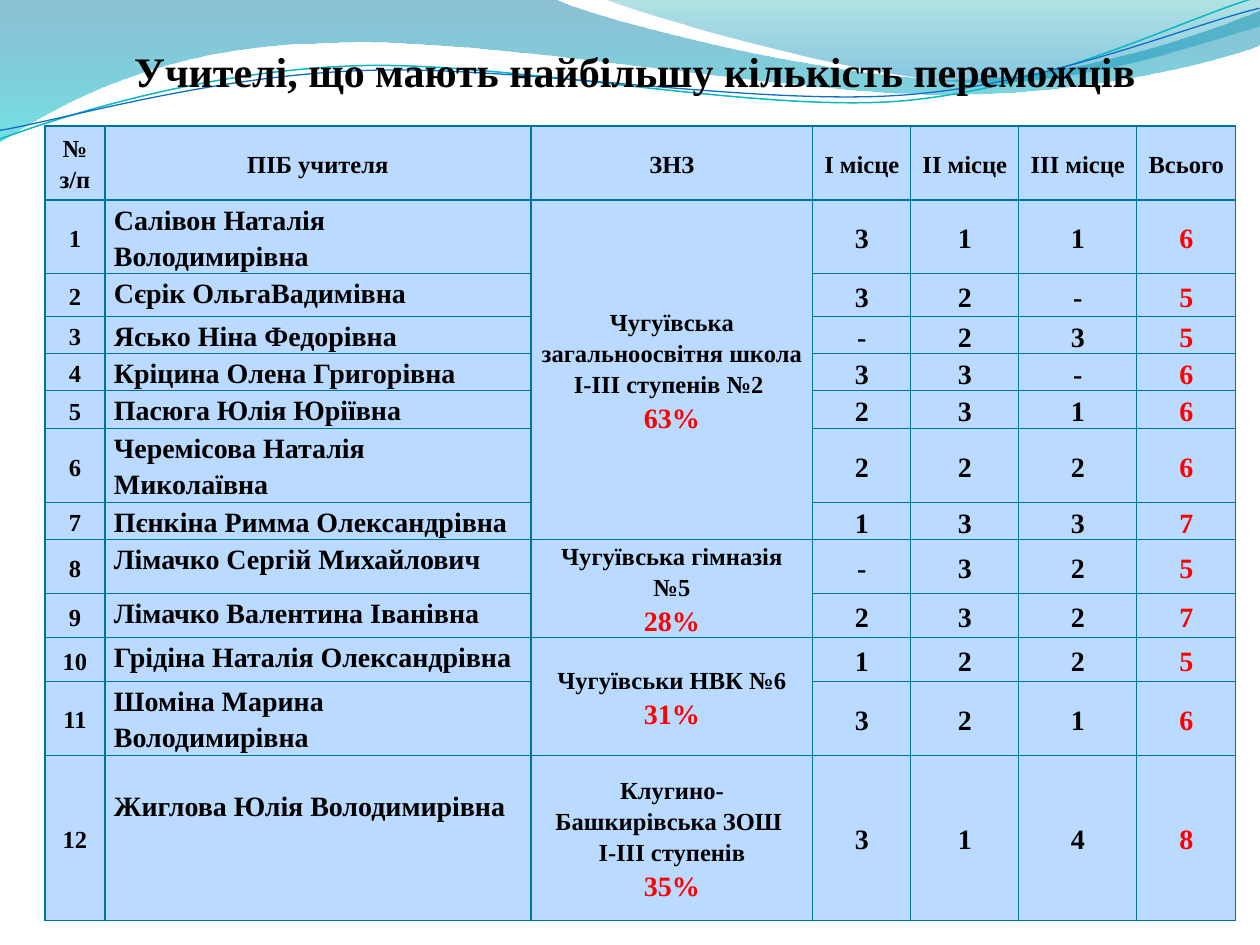
from dataclasses import dataclass

from lxml.etree import SubElement
from pptx import Presentation
from pptx.dml.color import RGBColor
from pptx.enum.text import MSO_ANCHOR, MSO_AUTO_SIZE, PP_ALIGN
from pptx.oxml import parse_xml
from pptx.oxml.ns import nsdecls, qn
from pptx.util import Emu, Pt

SCALE = 914400 / 126


@dataclass(frozen=True)
class Theme:
    font: str = "Times New Roman"
    text: str = "000000"
    accent: str = "FF0000"
    cell: str = "BADAFF"
    border: str = "0074A1"
    title_size: int = 24
    large: int = 16
    small: int = 14
    border_width: float = 0.75
    line_spacing: float = 1.15
    ribbon_rotation: float = 357.3


def px(length):
    return Emu(round(length * SCALE))


class SlideBuilder:
    def __init__(self, slide, theme):
        self.slide = slide
        self.theme = theme

    def outline(self, start, segments, close):
        builder = self.slide.shapes.build_freeform(px(start[0]), px(start[1]))
        points = [(px(x), px(y)) for segment in segments for x, y in segment]
        builder.add_line_segments(points, close=close)
        shape = builder.convert_to_shape()
        shape.shadow.inherit = False
        lines = iter(shape._element.xpath(".//a:lnTo"))
        for segment in segments:
            first, *others = [next(lines) for _ in segment]
            if others:
                curve = first.makeelement(qn("a:cubicBezTo"))
                first.addprevious(curve)
                for line in (first, *others):
                    curve.append(line[0])
                    line.getparent().remove(line)
        return shape

    def wave(self, start, segments, stops):
        shape = self.outline(start, segments, True)
        shape.line.fill.background()
        shape.fill.gradient()
        shape.fill.gradient_angle = 270
        for gradient_stop, (position, color, _) in zip(shape.fill.gradient_stops, stops):
            gradient_stop.position = position
            gradient_stop.color.rgb = RGBColor.from_string(color)
        colors = shape._element.xpath(".//a:gradFill//a:srgbClr")
        for color_element, (_, _, opacity) in zip(colors, stops):
            SubElement(color_element, qn("a:alpha")).set("val", str(opacity * 1000))

    def ribbon(self, start, segments, color, width):
        shape = self.outline(start, segments, False)
        shape.rotation = self.theme.ribbon_rotation
        shape.fill.background()
        shape.line.color.rgb = RGBColor.from_string(color)
        shape.line.width = Pt(width)

    def format_paragraph(self, paragraph, size, color, alignment):
        paragraph.alignment = alignment
        for run in paragraph.runs:
            run.font.name = self.theme.font
            run.font.size = Pt(size)
            run.font.bold = True
            run.font.color.rgb = RGBColor.from_string(color)

    def title(self, text, left, top, width, height):
        shape = self.slide.shapes.title
        shape.left, shape.top, shape.width, shape.height = map(px, (left, top, width, height))
        frame = shape.text_frame
        frame.text = text
        frame.auto_size = MSO_AUTO_SIZE.NONE
        frame.vertical_anchor = MSO_ANCHOR.BOTTOM
        frame.margin_left = frame.margin_right = frame.margin_bottom = 0
        frame.margin_top = px(6)
        self.format_paragraph(frame.paragraphs[0], self.theme.title_size,
                              self.theme.text, PP_ALIGN.CENTER)
        self.slide.shapes._spTree.append(shape._element)

    def table(self, left, top, widths, heights):
        frame = self.slide.shapes.add_table(
            len(heights), len(widths), px(left), px(top), px(sum(widths)), px(sum(heights)))
        table = frame.table
        for column, width in zip(table.columns, widths):
            column.width = px(width)
        for row, height in zip(table.rows, heights):
            row.height = px(height)
        for cell in table.iter_cells():
            self.style_cell(cell)
        return table

    def style_cell(self, cell):
        cell.margin_left = cell.margin_right = px(9)
        cell.margin_top = cell.margin_bottom = 0
        cell.vertical_anchor = MSO_ANCHOR.MIDDLE
        cell.fill.solid()
        cell.fill.fore_color.rgb = RGBColor.from_string(self.theme.cell)
        properties = cell._tc.get_or_add_tcPr()
        for index, side in enumerate("LRTB"):
            properties.insert(index, parse_xml(
                f'<a:ln{side} {nsdecls("a")} w="{Pt(self.theme.border_width)}"><a:solidFill>'
                f'<a:srgbClr val="{self.theme.border}"/></a:solidFill></a:ln{side}>'))

    def cell_text(self, cell, lines, alignment=PP_ALIGN.CENTER):
        frame = cell.text_frame
        for index, (text, size, color) in enumerate(lines):
            paragraph = frame.add_paragraph() if index else frame.paragraphs[0]
            paragraph.text = text
            paragraph.line_spacing = self.theme.line_spacing
            self.format_paragraph(paragraph, size, color, alignment)


WAVES = [
    ((0, 0), [((554, -1),), ((600, 21), (837, 79), (955, 79)),
              ((1075, 79), (1207, 33), (1260, 11)), ((1261, 45),),
              ((1239, 55), (1096, 96), (940, 94)), ((784, 94), (481, 35), (324, 43)),
              ((163, 45), (58, 105), (-1, 142))],
     [(0, "0074A1", 45), (1, "00C6CF", 55)]),
    ((604, -1), [((641, 15), (859, 78), (969, 82)),
                 ((1079, 87), (1211, 40), (1260, 26)), ((1260, 0),)],
     [(0, "00A1A9", 30), (0.8, "008BBF", 45)]),
]
RIBBONS = [
    ((-4, 110), [((59, 90), (199, 52), (350, 53)), ((499, 53), (745, 118), (896, 114)),
                 ((1049, 109), (1184, 45), (1260, 27))], "0AB8BF", 0.85),
    ((-4, 101), [((57, 94), (207, 57), (358, 58)), ((509, 58), (750, 112), (902, 108)),
                 ((1052, 104), (1188, 52), (1262, 38))], "0F6FC6", 0.75),
]
COLUMN_WIDTHS = [60, 426, 282, 98, 108, 118, 99]
ROW_HEIGHTS = [74, 74, 43, 37, 37, 38, 74, 37, 54, 44, 44, 74, 165]
HEADERS = ["№\nз/п", "ПІБ учителя", "ЗНЗ", "І місце", "ІІ місце", "ІІІ місце", "Всього"]
TEACHERS = [
    ("Салівон Наталія Володимирівна", "3", "1", "1", "6"),
    ("Сєрік ОльгаВадимівна", "3", "2", "-", "5"),
    ("Ясько Ніна Федорівна", "-", "2", "3", "5"),
    ("Кріцина Олена Григорівна", "3", "3", "-", "6"),
    ("Пасюга Юлія Юріївна", "2", "3", "1", "6"),
    ("Черемісова Наталія Миколаївна", "2", "2", "2", "6"),
    ("Пєнкіна Римма Олександрівна", "1", "3", "3", "7"),
    ("Лімачко Сергій Михайлович", "-", "3", "2", "5"),
    ("Лімачко Валентина Іванівна", "2", "3", "2", "7"),
    ("Грідіна Наталія Олександрівна", "1", "2", "2", "5"),
    ("Шоміна Марина Володимирівна", "3", "2", "1", "6"),
    ("Жиглова Юлія Володимирівна", "3", "1", "4", "8"),
]
SCHOOLS = [
    (7, "Чугуївська загальноосвітня школа І-ІІІ ступенів №2 ", "63%"),
    (2, "Чугуївська гімназія №5", "28%"),
    (2, "Чугуївськи НВК №6", "31%"),
    (1, "Клугино-Башкирівська ЗОШ \vІ-ІІІ ступенів", "35%"),
]


def main():
    presentation = Presentation()
    presentation.slide_width, presentation.slide_height = px(1260), px(945)
    theme = Theme()
    builder = SlideBuilder(presentation.slides.add_slide(presentation.slide_layouts[5]), theme)
    for wave in WAVES:
        builder.wave(*wave)
    for ribbon in RIBBONS:
        builder.ribbon(*ribbon)
    builder.title("Учителі, що мають найбільшу кількість переможців", 63, 16, 1144, 80)
    table = builder.table(45, 126, COLUMN_WIDTHS, ROW_HEIGHTS)

    for column, header in enumerate(HEADERS):
        lines = [(text, theme.small, theme.text) for text in header.split("\n")]
        builder.cell_text(table.cell(0, column), lines)

    for row, (name, *places, total) in enumerate(TEACHERS, 1):
        builder.cell_text(table.cell(row, 0), [(str(row), theme.small, theme.text)])
        name_cell = table.cell(row, 1)
        if row > 1:
            name_cell.vertical_anchor = MSO_ANCHOR.TOP
        builder.cell_text(name_cell, [(name, theme.large, theme.text)], PP_ALIGN.LEFT)
        for column, place in enumerate(places, 3):
            builder.cell_text(table.cell(row, column), [(place, theme.large, theme.text)])
        builder.cell_text(table.cell(row, 6), [(total, theme.large, theme.accent)])
    table.cell(len(TEACHERS), 1).margin_top = px(31)

    row = 1
    for row_count, name, percent in SCHOOLS:
        cell = table.cell(row, 2)
        if row_count > 1:
            cell.merge(table.cell(row + row_count - 1, 2))
        builder.cell_text(cell, [(name, theme.small, theme.text),
                                 (percent, theme.large, theme.accent)])
        row += row_count

    presentation.save("out.pptx")


if __name__ == "__main__":
    main()
